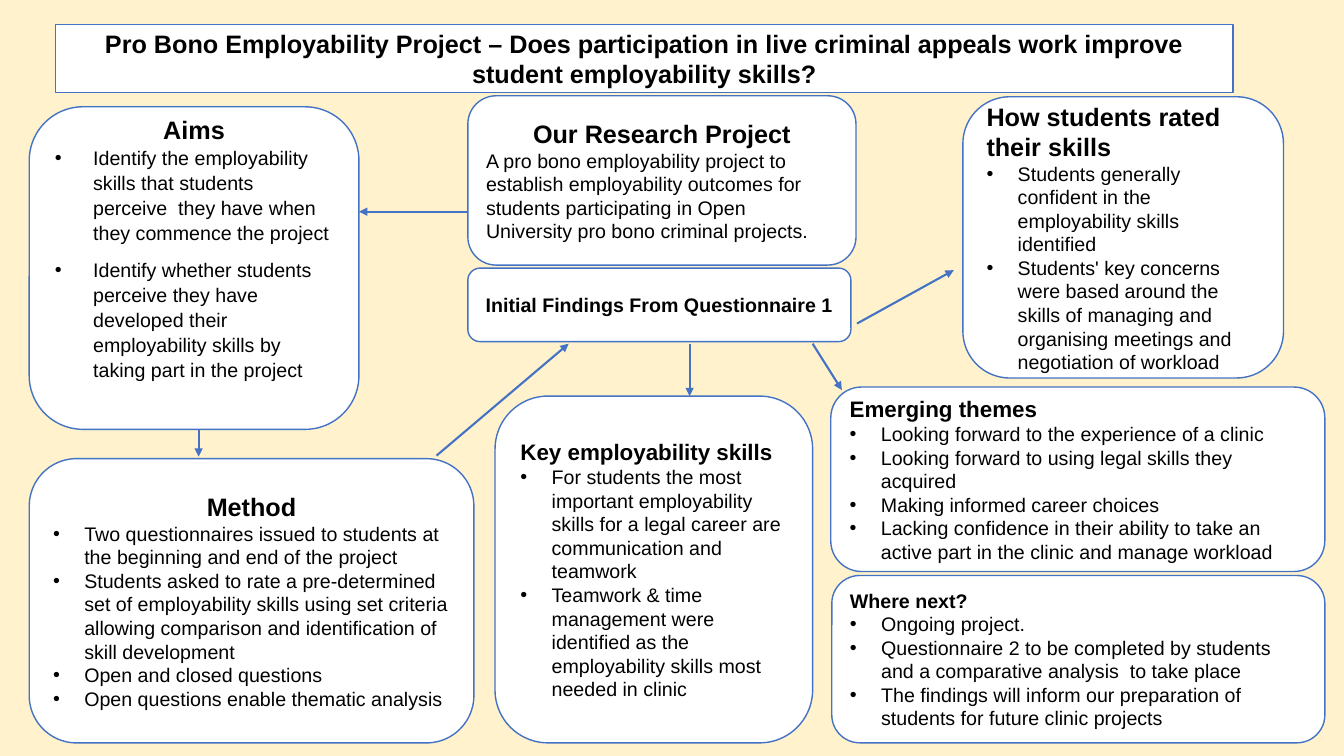
from dataclasses import dataclass

from lxml import etree
from pptx import Presentation
from pptx import util as u
from pptx.dml.color import RGBColor
from pptx.enum import shapes, text
from pptx.oxml.ns import qn


@dataclass(frozen=True)
class Theme:
    font: str = "Arial"
    background: RGBColor = RGBColor(0xFF, 0xF2, 0xCC)
    panel: RGBColor = RGBColor(0xFF, 0xFF, 0xFF)
    accent: RGBColor = RGBColor(0x44, 0x72, 0xC4)
    ink: RGBColor = RGBColor(0, 0, 0)
    title: int = 18
    subheading: int = 16
    body: int = 14
    outline: float = 1
    arrow: float = 1.5


LEFT, CENTER = text.PP_ALIGN.LEFT, text.PP_ALIGN.CENTER
ROUNDED = shapes.MSO_SHAPE.ROUNDED_RECTANGLE


class Poster:
    def __init__(self, slide, theme):
        self.slide, self.theme = slide, theme
        slide.background.fill.solid()
        slide.background.fill.fore_color.rgb = theme.background

    def panel(self, box, outline=ROUNDED):
        """Draw an outlined white shape and return its text frame."""
        panel = self.slide.shapes.add_shape(outline, *map(u.Inches, box))
        panel.shadow.inherit = False
        panel.fill.solid()
        panel.fill.fore_color.rgb = self.theme.panel
        panel.line.color.rgb = self.theme.accent
        panel.line.width = u.Pt(self.theme.outline)
        frame = panel.text_frame
        frame.word_wrap = True
        frame.vertical_anchor = text.MSO_ANCHOR.MIDDLE
        return frame

    def add_words(self, paragraph, words, size, bold=False, align=LEFT):
        paragraph.alignment = align
        run = paragraph.add_run()
        run.text = words
        run.font.name = self.theme.font
        run.font.size = u.Pt(size)
        run.font.bold = bold
        run.font.color.rgb = self.theme.ink

    def heading(self, frame, words, size, align=LEFT):
        self.add_words(frame.paragraphs[0], words, size, True, align)

    def bullets(self, frame, items, indent=0.31, line_spacing=None, after=None):
        for item in items:
            paragraph = frame.add_paragraph()
            properties = paragraph._p.get_or_add_pPr()
            properties.set("marL", str(u.Inches(indent)))
            properties.set("indent", str(-u.Inches(indent)))
            etree.SubElement(properties, qn("a:buFont"), typeface=self.theme.font)
            etree.SubElement(properties, qn("a:buChar"), char="•")
            if line_spacing:
                paragraph.line_spacing = line_spacing
            if after:
                paragraph.space_after = u.Pt(after)
            self.add_words(paragraph, item, self.theme.body)

    def arrow(self, start, end):
        arrow = self.slide.shapes.add_connector(
            shapes.MSO_CONNECTOR.STRAIGHT, *map(u.Inches, start + end))
        arrow.line.color.rgb = self.theme.accent
        arrow.line.width = u.Pt(self.theme.arrow)
        properties = arrow._element.spPr
        etree.SubElement(properties.get_or_add_ln(), qn("a:tailEnd"), type="triangle")
        etree.SubElement(properties, qn("a:effectLst"))


def main():
    deck = Presentation()
    deck.slide_width, deck.slide_height = u.Inches(13.33), u.Inches(7.5)
    theme = Theme()
    poster = Poster(deck.slides.add_slide(deck.slide_layouts[6]), theme)

    title = poster.panel((0.55, 0.24, 11.68, 0.68), shapes.MSO_SHAPE.RECTANGLE)
    poster.heading(
        title,
        "Pro Bono Employability Project – Does participation in live criminal "
        "appeals work improve student employability skills?",
        theme.title, CENTER)

    research = poster.panel((4.64, 0.95, 3.85, 1.68))
    poster.heading(research, "Our Research Project", theme.title, CENTER)
    poster.add_words(
        research.add_paragraph(),
        "A pro bono employability project to establish employability outcomes for "
        "students participating in Open University pro bono criminal projects.",
        theme.body)

    aims = poster.panel((0.29, 1.06, 3.27, 3.2))
    aims.margin_bottom = u.Inches(0.45)
    poster.heading(aims, "Aims", theme.title, CENTER)
    poster.bullets(aims, [
        "Identify the employability skills that students perceive  they have when "
        "they commence the project",
        "Identify whether students perceive they have developed their "
        "employability skills by taking part in the project",
    ], indent=0.38, line_spacing=1.07, after=8)

    findings = poster.panel((4.64, 2.66, 3.8, 0.73))
    poster.heading(findings, "Initial Findings From Questionnaire 1", theme.body, CENTER)

    bulleted_panels = [
        ((0.29, 4.55, 4.41, 2.82), "Method", theme.title, CENTER, [
            "Two questionnaires issued to students at the beginning and end of the project",
            "Students asked to rate a pre-determined set of employability skills using "
            "set criteria allowing comparison and identification of skill development",
            "Open and closed questions",
            "Open questions enable thematic analysis",
        ]),
        ((4.91, 3.93, 3.15, 3.44), "Key employability skills", theme.subheading, LEFT, [
            "For students the most important employability skills for a legal career "
            "are communication and teamwork",
            "Teamwork & time management were identified as the employability skills "
            "most needed in clinic",
        ]),
        ((9.55, 0.96, 3.18, 2.79), "How students rated their skills", theme.title, LEFT, [
            "Students generally confident in the employability skills identified",
            "Students' key concerns were based around the skills of managing and "
            "organising meetings and negotiation of workload",
        ]),
        ((8.24, 3.84, 4.9, 1.83), "Emerging themes", theme.subheading, LEFT, [
            "Looking forward to the experience of a clinic",
            "Looking forward to using legal skills they acquired",
            "Making informed career choices",
            "Lacking confidence in their ability to take an active part in the clinic "
            "and manage workload",
        ]),
        ((8.25, 5.71, 4.89, 1.66), "Where next?", theme.body, LEFT, [
            "Ongoing project.",
            "Questionnaire 2 to be completed by students and a comparative analysis  "
            "to take place",
            "The findings will inform our preparation of students for future clinic projects",
        ]),
    ]
    for box, heading, size, align, items in bulleted_panels:
        frame = poster.panel(box)
        poster.heading(frame, heading, size, align)
        poster.bullets(frame, items)

    for start, end in [
        ((4.63, 2.1), (3.56, 2.1)),
        ((1.97, 4.26), (1.97, 4.53)),
        ((4.33, 4.52), (5.64, 3.41)),
        ((6.84, 3.41), (6.84, 3.93)),
        ((8.5, 3.21), (9.46, 2.68)),
        ((8.06, 3.41), (8.35, 3.87)),
    ]:
        poster.arrow(start, end)

    deck.save("out.pptx")


if __name__ == "__main__":
    main()
